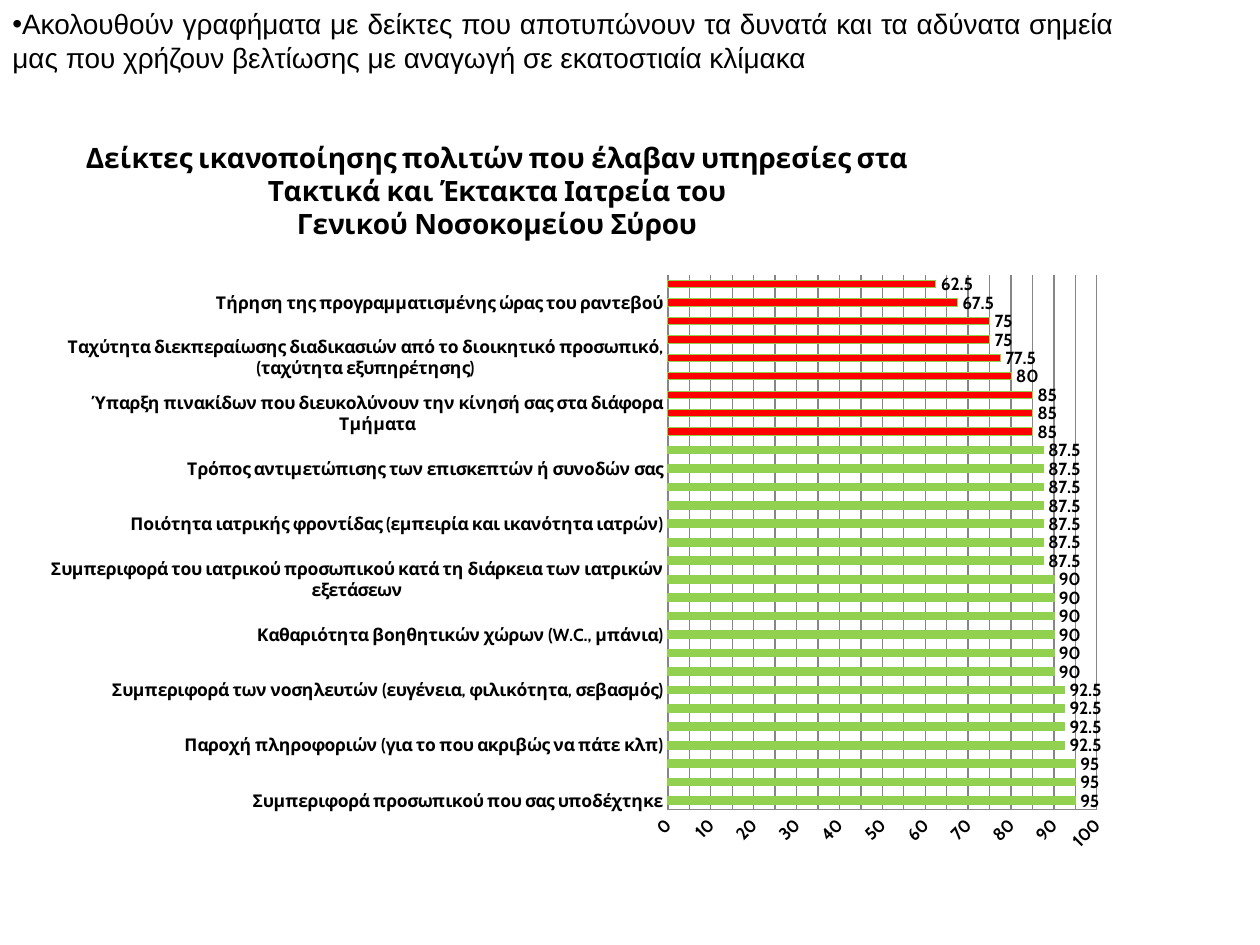
"""Builds a slide with a bar chart of outpatient satisfaction indices."""
from lxml import etree
from pptx import Presentation
from pptx import util as u
from pptx.chart.data import CategoryChartData
from pptx.dml.color import RGBColor
from pptx.enum import chart as charts, text
from pptx.oxml import parse_xml
from pptx.oxml.ns import nsdecls, qn

INDICES = [
    ("Συμπεριφορά προσωπικού που σας υποδέχτηκε", 95),
    ("Συμπεριφορά του προσωπικού κατά τη διάρκεια των εξετάσεων", 95),
    ("Συμπεριφορά του νοσηλευτικού πρ. κατά τη διάρκεια των ιατρικών εξετάσεων", 95),
    ("Παροχή πληροφοριών (για το που ακριβώς να πάτε κλπ)", 92.5),
    ("Σεβασμό της προσωπικότητας του εξεταζόμενου ασθενούς (παραβάν κ.τ.λ.)", 92.5),
    ("Ποιότητα νοσηλευτικής φροντίδας (εμπειρία και ικανότητα νοσηλευτών)", 92.5),
    ("Συμπεριφορά των νοσηλευτών (ευγένεια, φιλικότητα, σεβασμός)", 92.5),
    ("Ύπαρξη ελεύθερων καθισμάτων για τη διάρκεια της αναμονής σας", 90),
    ("Θερμοκρασία χώρων (θέρμανση – ψύξη)", 90),
    ("Καθαριότητα βοηθητικών χώρων (W.C., μπάνια)", 90),
    ("Συμπεριφορά των γιατρών (ευγένεια, φιλικότητα, σεβασμός)", 90),
    ("Ψυχολογική υποστήριξη από τους γιατρούς", 90),
    ("Συμπεριφορά του ιατρικού προσωπικού κατά τη διάρκεια των ιατρικών εξετάσεων", 90),
    ("Καθαριότητα των χώρων υποδοχής", 87.5),
    ("Προσβασιμότητα σε άτομα με αναπηρία", 87.5),
    ("Ποιότητα ιατρικής φροντίδας (εμπειρία και ικανότητα ιατρών)", 87.5),
    ("Πλήρης και κατανοητή ενημέρωση σχετικά με την πορεία της νόσου και της θεραπείας σας", 87.5),
    ("Συμπεριφορά διοικητικού προσωπικού (ενημέρωση, ευγένεια, φιλικότητα , σεβασμός)", 87.5),
    ("Τρόπος αντιμετώπισης των επισκεπτών ή συνοδών σας", 87.5),
    ("Εμπιστευτικότητα (προστασία των προσωπικών σας δεδομένων)", 87.5),
    ("Τηλεφωνική εξυπηρέτηση (ραντεβού – πληροφορίες)", 85),
    ("Ύπαρξη πινακίδων που διευκολύνουν την κίνησή σας στα διάφορα Τμήματα", 85),
    ("Ύπαρξη ησυχίας", 85),
    ("Χρόνος αναμονής μέχρι την επίσκεψη στο γιατρό", 80),
    ("Ταχύτητα διεκπεραίωσης διαδικασιών από το διοικητικό προσωπικό, (ταχύτητα εξυπηρέτησης)", 77.5),
    ("Χρόνος αναμονής για τη διενέργεια εξετάσεων", 75),
    ("Χρόνος έκδοσης αποτελεσμάτων εξετάσεων", 75),
    ("Τήρηση της προγραμματισμένης ώρας του ραντεβού", 67.5),
    ("Χρόνος αναμονής μεταξύ κλεισίματος και ημερομηνίας ραντεβού", 62.5),
]
BLACK, GREY, GREEN, RED = "000000", "868686", "92D050", "FF0000"
LEFT, TOP, WIDTH, HEIGHT = 36, 129, 1089, 738


def px(count):
    return u.Emu(round(count * 914400 / 126))


def style(font, size, bold=False, name="Cabin", color=BLACK):
    font.size, font.bold, font.name = u.Pt(size), bold, name
    font.color.rgb = RGBColor.from_string(color)


deck = Presentation()
deck.slide_width, deck.slide_height = px(1260), px(945)
page = deck.slides.add_slide(deck.slide_layouts[6])

box = page.shapes.add_textbox(px(0), px(0), px(1126), px(81))
frame = box.text_frame
frame.word_wrap = True
frame.vertical_anchor = text.MSO_ANCHOR.MIDDLE
para = frame.paragraphs[0]
para.text = ("Ακολουθούν γραφήματα με δείκτες που αποτυπώνουν τα δυνατά και τα αδύνατα σημεία "
             "μας που χρήζουν βελτίωσης με αναγωγή σε εκατοστιαία κλίμακα")
para.alignment = text.PP_ALIGN.JUSTIFY
properties = para._p.get_or_add_pPr()
etree.SubElement(properties, qn("a:buFont")).set("typeface", "Arial")
etree.SubElement(properties, qn("a:buChar")).set("char", "•")
tabs = etree.SubElement(properties, qn("a:tabLst"))
tab = etree.SubElement(tabs, qn("a:tab"))
tab.set("pos", str(px(38)))
tab.set("algn", "l")
style(para.runs[0].font, 16, name="Arial")

data = CategoryChartData()
data.categories = [label for label, value in INDICES]
data.add_series("Series 1", [value for label, value in INDICES])
chart = page.shapes.add_chart(charts.XL_CHART_TYPE.BAR_CLUSTERED,
                              px(LEFT), px(TOP), px(WIDTH), px(HEIGHT), data).chart
chart.has_legend = False
style(chart.font, 10)

chart.has_title = True
title = chart.chart_title
title.text_frame.text = ("Δείκτες ικανοποίησης πολιτών που έλαβαν υπηρεσίες στα Τακτικά και Έκτακτα Ιατρεία του\n"
                         "Γενικού Νοσοκομείου Σύρου")
for para in title.text_frame.paragraphs:
    style(para.runs[0].font, 16, True)
title.include_in_layout = False

plot = chart.plots[0]
plot.gap_width = 150
plot.vary_by_categories = False
series = plot.series[0]
series.format.fill.solid()
series.format.fill.fore_color.rgb = RGBColor.from_string(GREEN)
series.format.line.color.rgb = RGBColor.from_string(GREEN)
series.format.line.width = u.Pt(0.75)
for index, (label, value) in enumerate(INDICES):
    if value <= 85:
        point = series.points[index].format
        point.fill.solid()
        point.fill.fore_color.rgb = RGBColor.from_string(RED)
        point.line.color.rgb = RGBColor.from_string(GREEN)
labels = series.data_labels
labels.show_value = True
labels.position = charts.XL_LABEL_POSITION.OUTSIDE_END
style(labels.font, 10, True)

scale = chart.value_axis
scale.minimum_scale, scale.maximum_scale, scale.major_unit = 0, 100, 5
scale.has_major_gridlines = True
for axis in (chart.category_axis, scale):
    axis.major_tick_mark = charts.XL_TICK_MARK.NONE
    style(axis.tick_labels.font, 10, True)
    axis.format.line.color.rgb = RGBColor.from_string(GREY)
scale.major_gridlines.format.line.color.rgb = RGBColor.from_string(GREY)
scale._element.find(qn("c:txPr")).find(qn("a:bodyPr")).set("rot", "-2700000")

for parent, position, target, places in (
        (title._element, 1, "",
         {"x": (82 - LEFT) / WIDTH, "y": (136 - TOP) / HEIGHT}),
        (chart._chartSpace.chart.plotArea, 0, '<c:layoutTarget val="inner"/>',
         {"x": (668 - LEFT) / WIDTH, "y": (275 - TOP) / HEIGHT,
          "w": 429 / WIDTH, "h": 535 / HEIGHT})):
    modes = "".join(f'<c:{key}Mode val="edge"/>' for key in "xy")
    values = "".join(f'<c:{key} val="{value:.4f}"/>' for key, value in places.items())
    layout = parse_xml(f'<c:layout {nsdecls("c")}><c:manualLayout>{target}{modes}{values}'
                       '</c:manualLayout></c:layout>')
    for old in parent.findall(qn("c:layout")):
        parent.remove(old)
    parent.insert(position, layout)

deck.save("out.pptx")
